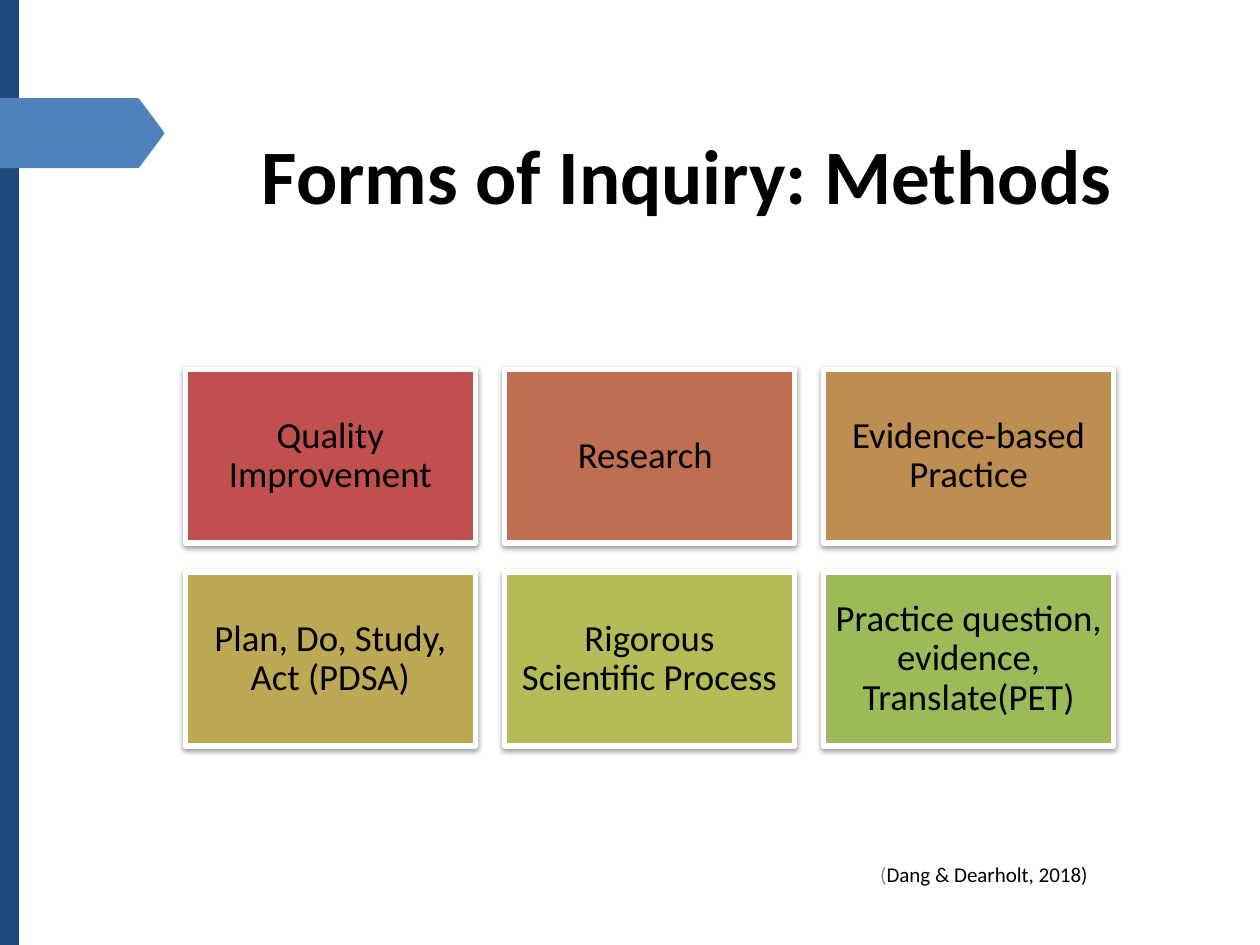
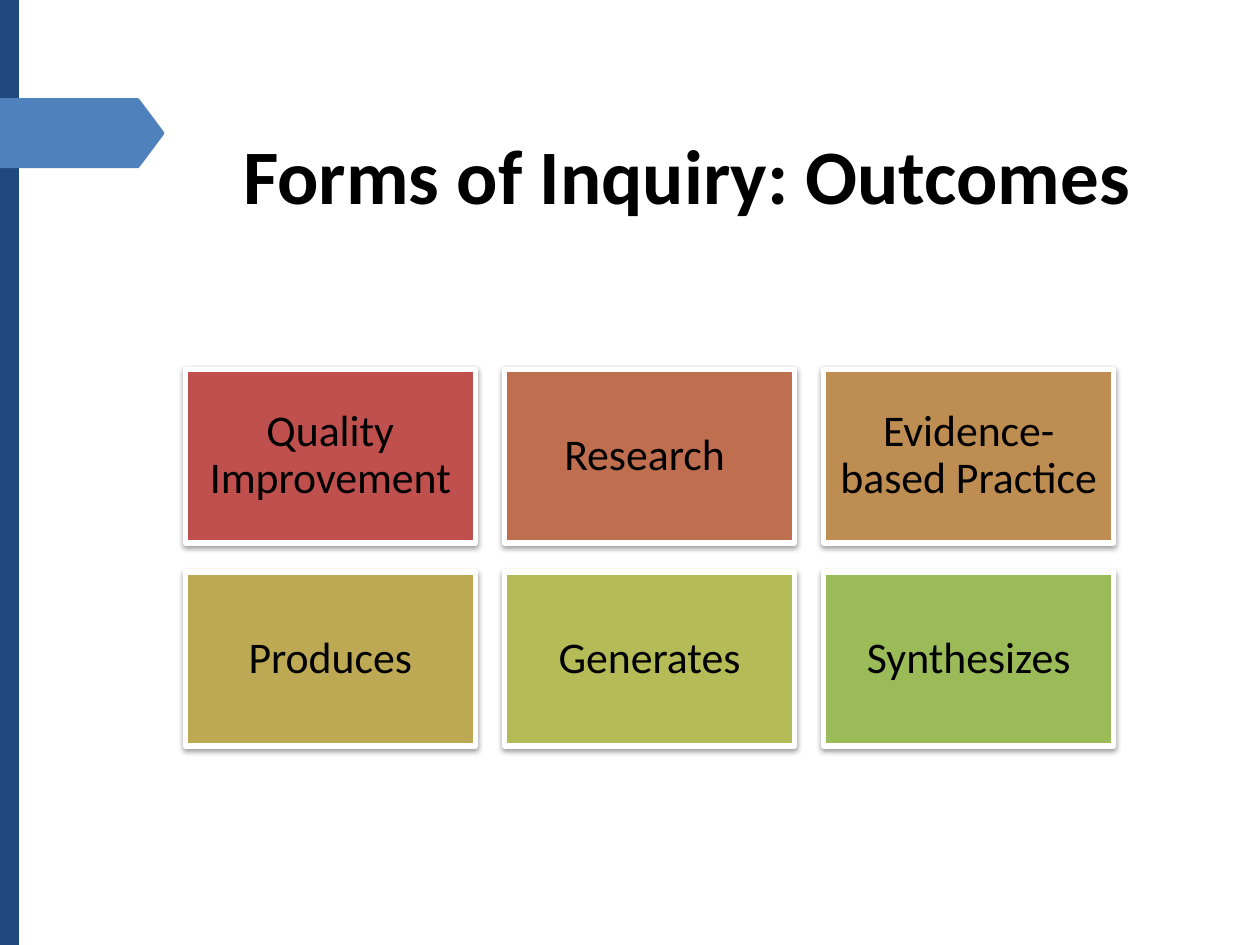
from dataclasses import dataclass

from lxml.etree import SubElement
from pptx import Presentation
from pptx.dml.color import RGBColor
from pptx.enum.shapes import MSO_SHAPE
from pptx.enum.text import MSO_ANCHOR, PP_ALIGN
from pptx.oxml.ns import qn
from pptx.util import Inches, Pt

SLIDE_WIDTH, SLIDE_HEIGHT = Inches(10), Inches(7.5)
COLUMNS, ROWS = 100, 75


@dataclass(frozen=True)
class Theme:
    font: str = "Calibri"
    ink: str = "000000"
    muted: str = "8C8C8C"
    paper: str = "FFFFFF"
    side_bar: str = "1F497D"
    arrow_tag: str = "4F81BD"
    cards: tuple = ("C0504D", "BF6F4F", "BE8D52", "BDA954", "B5BC57", "9BBB59")
    title_size: int = 44
    citation_size: int = 12
    card_border: int = 3


@dataclass(frozen=True)
class Box:
    """An area in columns and rows of the slide grid."""
    left: float
    top: float
    width: float
    height: float

    def emu(self):
        return (across(self.left), down(self.top),
                across(self.width), down(self.height))

    def cell(self, index, columns, rows, gap):
        row, column = divmod(index, columns)
        width = (self.width - gap * (columns - 1)) / columns
        height = (self.height - gap * (rows - 1)) / rows
        return Box(self.left + column * (width + gap),
                   self.top + row * (height + gap), width, height)


THEME = Theme()
SIDE_BAR = Box(0, 0, 1.5, ROWS)
ARROW_TAG = Box(0, 7.8, 13.05, 5.55)
TITLE = Box(14.7, 6.8, 79.7, 14)
CARD_GRID = Box(14.7, 29.3, 73.7, 29.9)
CARD_GAP = 2.3
CITATION = Box(67.7, 67.6, 20.8, 3.6)


def across(columns):
    return round(SLIDE_WIDTH * columns / COLUMNS)


def down(rows):
    return round(SLIDE_HEIGHT * rows / ROWS)


def paint(shape, color):
    shape.shadow.inherit = False
    shape.fill.solid()
    shape.fill.fore_color.rgb = RGBColor.from_string(color)
    shape.line.fill.background()


def write(frame, runs, size, bold=False):
    """Fill a frame with one centred paragraph of (text, colour) runs."""
    frame.word_wrap = True
    frame.vertical_anchor = MSO_ANCHOR.MIDDLE
    paragraph = frame.paragraphs[0]
    paragraph.alignment = PP_ALIGN.CENTER
    for text, color in runs:
        run = paragraph.add_run()
        run.text = text
        run.font.name = THEME.font
        run.font.size = Pt(size)
        run.font.bold = bold
        run.font.color.rgb = RGBColor.from_string(color)
    return paragraph


def add_title(slide, box, text):
    title = slide.shapes.title
    title.left, title.top, title.width, title.height = box.emu()
    write(title.text_frame, [(text, THEME.ink)], THEME.title_size, bold=True)


def add_side_bar(slide, box):
    bar = slide.shapes.add_shape(MSO_SHAPE.RECTANGLE, *box.emu())
    paint(bar, THEME.side_bar)


def add_arrow_tag(slide, box):
    """Draw a tag pointing right, with its three corners slightly cut."""
    outline = [(0, 0), (0.84, 0), (0.85, 0.02), (0.99, 0.46), (1, 0.5),
               (0.99, 0.54), (0.85, 0.98), (0.84, 1), (0, 1)]
    points = [(across(box.left + x * box.width), down(box.top + y * box.height))
              for x, y in outline]
    builder = slide.shapes.build_freeform(*points[0])
    builder.add_line_segments(points[1:], close=True)
    paint(builder.convert_to_shape(), THEME.arrow_tag)


def add_soft_shadow(shape):
    effects = shape._element.spPr.find(qn("a:effectLst"))
    shadow = SubElement(effects, qn("a:outerShdw"), blurRad=str(Pt(3.1)),
                        dist=str(Pt(1.6)), dir="5400000", rotWithShape="0")
    color = SubElement(shadow, qn("a:srgbClr"), val=THEME.ink)
    SubElement(color, qn("a:alpha"), val="38000")


def add_card(slide, box, text, color, size, inset):
    card = slide.shapes.add_shape(MSO_SHAPE.RECTANGLE, *box.emu())
    paint(card, color)
    card.line.color.rgb = RGBColor.from_string(THEME.paper)
    card.line.width = Pt(THEME.card_border)
    add_soft_shadow(card)
    frame = card.text_frame
    frame.margin_left = frame.margin_right = across(inset)
    frame.margin_top = frame.margin_bottom = down(inset)
    write(frame, [(text, THEME.ink)], size).line_spacing = 0.9


def add_card_grid(slide, box, labels, size, inset):
    for index, (label, color) in enumerate(zip(labels, THEME.cards)):
        add_card(slide, box.cell(index, 3, 2, CARD_GAP), label, color, size, inset)


def add_citation(slide, box, text):
    citation = slide.shapes.add_textbox(*box.emu())
    write(citation.text_frame, [("(", THEME.muted), (text, THEME.ink)],
          THEME.citation_size)


def add_inquiry_slide(deck, topic, answers, size, inset):
    """Show the three forms of inquiry above their answers to the topic."""
    slide = deck.slides.add_slide(deck.slide_layouts[5])
    add_title(slide, TITLE, f"Forms of Inquiry: {topic}")
    add_side_bar(slide, SIDE_BAR)
    add_arrow_tag(slide, ARROW_TAG)
    forms = ["Quality Improvement", "Research ", "Evidence-based Practice"]
    add_card_grid(slide, CARD_GRID, forms + answers, size, inset)
    return slide


def main():
    deck = Presentation()
    deck.slide_width, deck.slide_height = SLIDE_WIDTH, SLIDE_HEIGHT
    methods = add_inquiry_slide(
        deck, "Methods",
        ["Plan, Do, Study, Act (PDSA)", "Rigorous Scientific Process",
         "Practice question, evidence, Translate(PET)"],
        size=21, inset=0.9)
    add_citation(methods, CITATION, "Dang & Dearholt, 2018)")
    add_inquiry_slide(deck, "Outcomes", ["Produces", "Generates", "Synthesizes"],
                      size=25, inset=1)
    deck.save("out.pptx")


if __name__ == "__main__":
    main()
